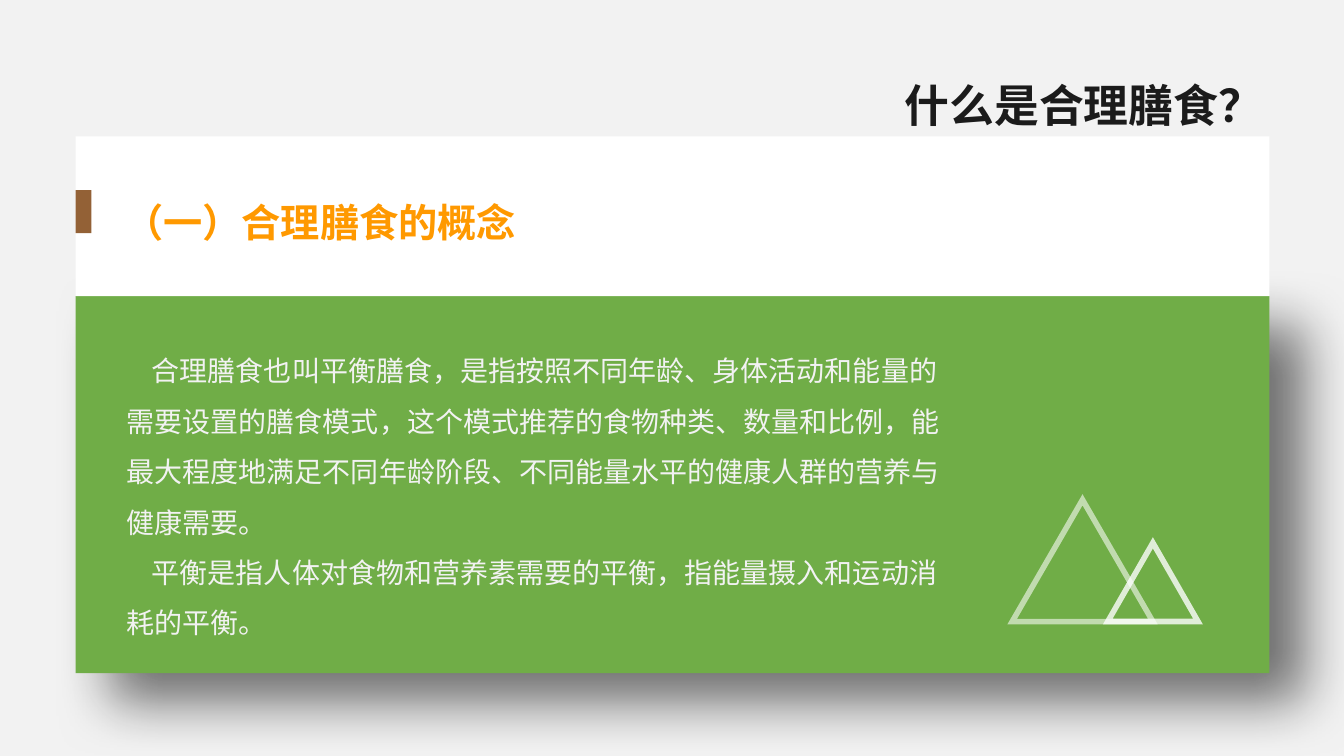
from typing import NamedTuple

from lxml.etree import SubElement
from pptx import Presentation
from pptx.dml.color import RGBColor
from pptx.enum.lang import MSO_LANGUAGE_ID as Lang
from pptx.enum.shapes import MSO_SHAPE as Shape
from pptx.enum.text import MSO_ANCHOR as Anchor, MSO_AUTO_SIZE as AutoSize, PP_ALIGN as Align
from pptx.oxml.ns import qn
from pptx.util import Pt

EMU_PER_PX = 9525
CJK_FONT = "Noto Sans CJK SC"


class Box(NamedTuple):
    """A rectangle in px."""
    left: int
    top: int
    width: int
    height: int


class Panel(NamedTuple):
    """A filled rectangle."""
    box: Box
    color: str


class Peak(NamedTuple):
    """An outlined triangle with its opacity in percent."""
    box: Box
    opacity: int


class TextStyle(NamedTuple):
    """The look of a block of text."""
    size: int
    color: str
    font: str
    bold: bool
    spacing: float
    align: Align = Align.LEFT
    anchor: Anchor = Anchor.TOP
    indent: int = 0


GREEN_PANEL = Panel(Box(72, 282, 1137, 359), "70AD47")
HEADER_PANELS = [
    Panel(Box(72, 130, 1137, 152), "FFFFFF"),
    Panel(Box(72, 181, 15, 41), "936136"),
]
PEAKS = [Peak(Box(964, 476, 134, 116), 56), Peak(Box(1055, 517, 86, 75), 78)]

TITLE_STYLE = TextStyle(32, "1B1B1B", "Arial", True, 1.3, align=Align.RIGHT)
HEADING_STYLE = TextStyle(28, "FF9900", CJK_FONT, True, 1.5)
BODY_STYLE = TextStyle(20, "F2F2F2", CJK_FONT, False, 1.5, anchor=Anchor.MIDDLE, indent=24)
BODY = [
    "合理膳食也叫平衡膳食，是指按照不同年龄、身体活动和能量的需要设置的膳食模式，"
    "这个模式推荐的食物种类、数量和比例，能最大程度地满足不同年龄阶段、"
    "不同能量水平的健康人群的营养与健康需要。",
    "平衡是指人体对食物和营养素需要的平衡，指能量摄入和运动消耗的平衡。",
]


def px(length: int) -> int:
    """Turn px into EMU."""
    return length * EMU_PER_PX


def rgb(color: str) -> RGBColor:
    """Turn a hex string into a colour."""
    return RGBColor.from_string(color)


def place(sp, box: Box) -> None:
    """Move and size a shape."""
    sp.left, sp.top, sp.width, sp.height = map(px, box)


def add_panel(shapes, panel: Panel):
    """Draw a filled rectangle without outline."""
    sp = shapes.add_shape(Shape.RECTANGLE, *map(px, panel.box))
    sp.shadow.inherit = False
    sp.fill.solid()
    sp.fill.fore_color.rgb = rgb(panel.color)
    sp.line.fill.background()
    return sp


def add_shadow(sp, opacity: int, blur: int, distance: int, angle: int) -> None:
    """Give a shape a soft black outer shadow."""
    effects = sp._element.spPr.find(qn("a:effectLst"))
    shadow = SubElement(effects, qn("a:outerShdw"), blurRad=str(Pt(blur)), dist=str(Pt(distance)),
                        dir=str(angle * 60000), algn="tl", rotWithShape="0")
    color = SubElement(shadow, qn("a:srgbClr"), val="000000")
    SubElement(color, qn("a:alpha"), val=str(opacity * 1000))


def add_peak(shapes, peak: Peak) -> None:
    """Draw a translucent white triangle outline."""
    sp = shapes.add_shape(Shape.ISOSCELES_TRIANGLE, *map(px, peak.box))
    sp.shadow.inherit = False
    sp.fill.background()
    sp.line.color.rgb = rgb("FFFFFF")
    sp.line.width = Pt(4)
    ln = sp._element.spPr.find(qn("a:ln"))
    SubElement(ln.find(".//" + qn("a:srgbClr")), qn("a:alpha"), val=str(peak.opacity * 1000))
    SubElement(ln, qn("a:miter"), lim="800000")


def write(sp, box: Box, texts: list[str], style: TextStyle) -> None:
    """Place a text shape and fill it with one paragraph per text."""
    place(sp, box)
    tf = sp.text_frame
    tf.word_wrap = True
    tf.auto_size = AutoSize.NONE
    tf.vertical_anchor = style.anchor
    for i, text in enumerate(texts):
        p = tf.add_paragraph() if i else tf.paragraphs[0]
        p.alignment = style.align
        p.line_spacing = style.spacing
        p.space_before = Pt(0)
        pPr = p._p.get_or_add_pPr()
        pPr.set("marL", "0")
        pPr.set("indent", str(px(style.indent)))
        SubElement(pPr, qn("a:buNone"))
        r = p.add_run()
        r.text = text
        r.font.size = Pt(style.size)
        r.font.bold = style.bold
        r.font.color.rgb = rgb(style.color)
        r.font.name = style.font
        r.font.language_id = Lang.SIMPLIFIED_CHINESE
        SubElement(r._r.get_or_add_rPr(), qn("a:ea"), typeface=style.font)


def main() -> None:
    """Build the slide and save it."""
    prs = Presentation()
    prs.slide_width, prs.slide_height = px(1280), px(720)
    slide = prs.slides.add_slide(prs.slide_layouts[1])
    slide.background.fill.solid()
    slide.background.fill.fore_color.rgb = rgb("F2F2F2")
    shapes = slide.shapes
    title, body = slide.placeholders

    add_shadow(add_panel(shapes, GREEN_PANEL), opacity=54, blur=40, distance=33, angle=40)
    for sp in (body, title):
        shapes._spTree.append(sp._element)
    write(body, Box(111, 315, 801, 300), BODY, BODY_STYLE)
    write(title, Box(747, 54, 466, 77), ["什么是合理膳食？"], TITLE_STYLE)
    for peak in PEAKS:
        add_peak(shapes, peak)
    header = shapes.add_group_shape()
    for panel in HEADER_PANELS:
        add_panel(header.shapes, panel)
    heading = shapes.add_textbox(0, 0, 0, 0)
    write(heading, Box(109, 162, 502, 67), ["（一）合理膳食的概念"], HEADING_STYLE)
    prs.save("out.pptx")


if __name__ == "__main__":
    main()
